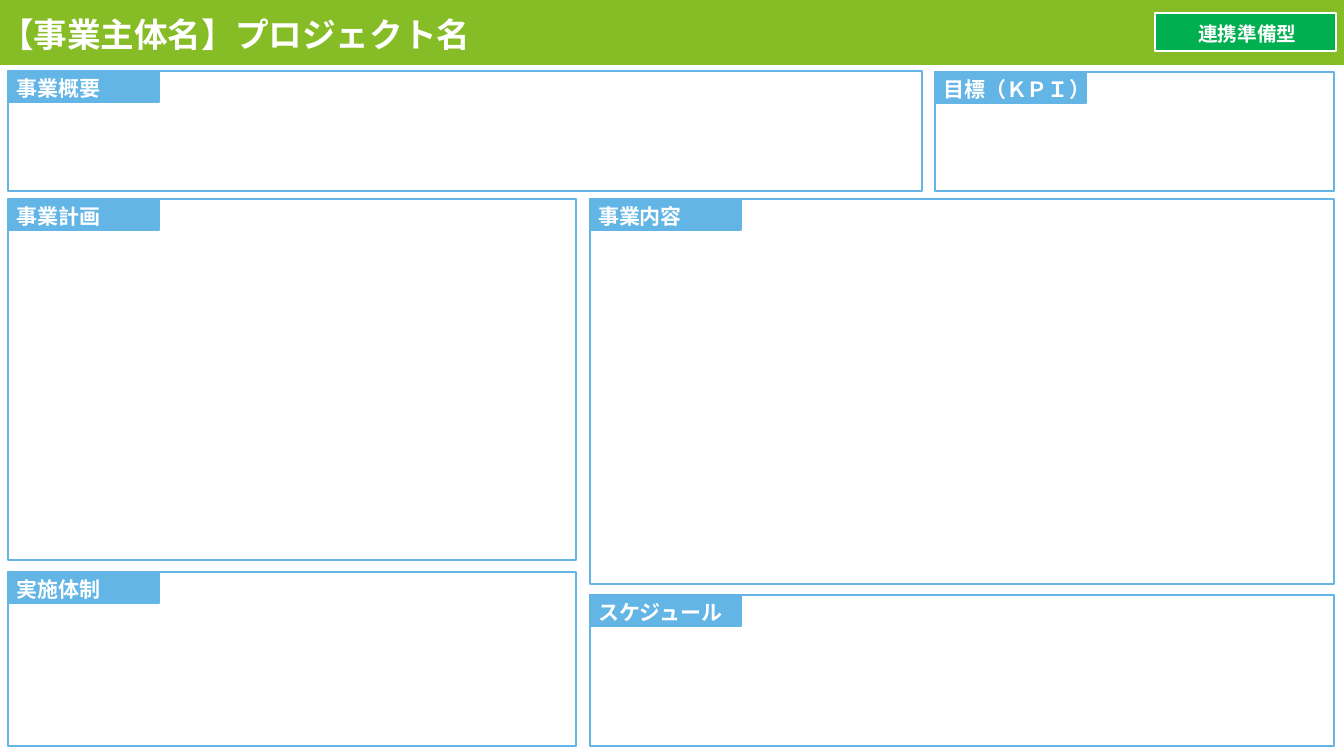
from lxml import etree
from pptx import Presentation
from pptx import util as u
from pptx.dml.color import RGBColor
from pptx.enum import shapes, text
from pptx.oxml.ns import qn

FONT = "Noto Sans CJK JP"
GREEN, BADGE, BLUE, WHITE = "86BC25", "00B050", "62B5E5", "FFFFFF"
WIDTH, HEIGHT = 1344, 756
TAB_WIDTH, TAB_HEIGHT = 151, 31
LEFT, RIGHT_COLUMN = 8, 590
LEFT_WIDTH, RIGHT_WIDTH = 568, 744

SECTIONS = [
    ("事業概要", (LEFT, 71, 914, 120)),
    ("目標（ＫＰＩ）", (935, 72, 399, 119)),
    ("事業計画", (LEFT, 199, LEFT_WIDTH, 361)),
    ("事業内容", (RIGHT_COLUMN, 199, RIGHT_WIDTH, 385)),
    ("実施体制", (LEFT, 572, LEFT_WIDTH, 174)),
    ("スケジュール", (RIGHT_COLUMN, 595, RIGHT_WIDTH, 151)),
]


def px(n):
    return u.Emu(round(n * 914400 / 100.8))


def color(value):
    return RGBColor.from_string(value)


def paint(sp, fill=None, line=None, weight=1):
    if fill:
        sp.fill.solid()
        sp.fill.fore_color.rgb = color(fill)
    else:
        sp.fill.background()
    if line:
        sp.line.color.rgb = color(line)
        sp.line.width = u.Pt(weight)
    else:
        sp.line.fill.background()


def add_rect(s, box, fill, line, weight):
    sp = s.shapes.add_shape(shapes.MSO_SHAPE.RECTANGLE, *map(px, box))
    sp.shadow.inherit = False
    paint(sp, fill, line, weight)
    return sp


def write(sp, words, size, left, right, align=text.PP_ALIGN.LEFT):
    tf = sp.text_frame
    tf.word_wrap = False
    tf.auto_size = text.MSO_AUTO_SIZE.NONE
    tf.vertical_anchor = text.MSO_ANCHOR.MIDDLE
    tf.margin_left, tf.margin_right = px(left), px(right)
    tf.margin_top, tf.margin_bottom = px(4), 0
    p = tf.paragraphs[0]
    p.alignment = align
    r = p.add_run()
    r.text = words
    r.font.name = FONT
    r.font.size = u.Pt(size)
    r.font.bold = True
    r.font.color.rgb = color(WHITE)
    etree.SubElement(r.font._element, qn("a:ea")).set("typeface", FONT)


def add_header(s, box, title, badge):
    x, y, w, h = box
    sp = s.shapes.title
    sp.left, sp.top, sp.width, sp.height = map(px, box)
    paint(sp, GREEN)
    write(sp, title, 24, 0, 0)
    sp = add_rect(s, (x + w - 189, y + 13, 181, 38), BADGE, WHITE, 2)
    write(sp, badge, 14, 8, 4, text.PP_ALIGN.CENTER)


def add_section(s, box, label):
    x, y, w, h = box
    add_rect(s, box, None, BLUE, 2)
    tab = add_rect(s, (x, y, TAB_WIDTH, TAB_HEIGHT), BLUE, BLUE, 1)
    write(tab, label, 15, 8, 4)


def main():
    prs = Presentation()
    prs.slide_width, prs.slide_height = px(WIDTH), px(HEIGHT)
    s = prs.slides.add_slide(prs.slide_layouts[5])
    add_header(s, (0, 0, WIDTH, 65), "【事業主体名】プロジェクト名", "連携準備型")
    for label, box in SECTIONS:
        add_section(s, box, label)
    prs.save("out.pptx")


if __name__ == "__main__":
    main()
